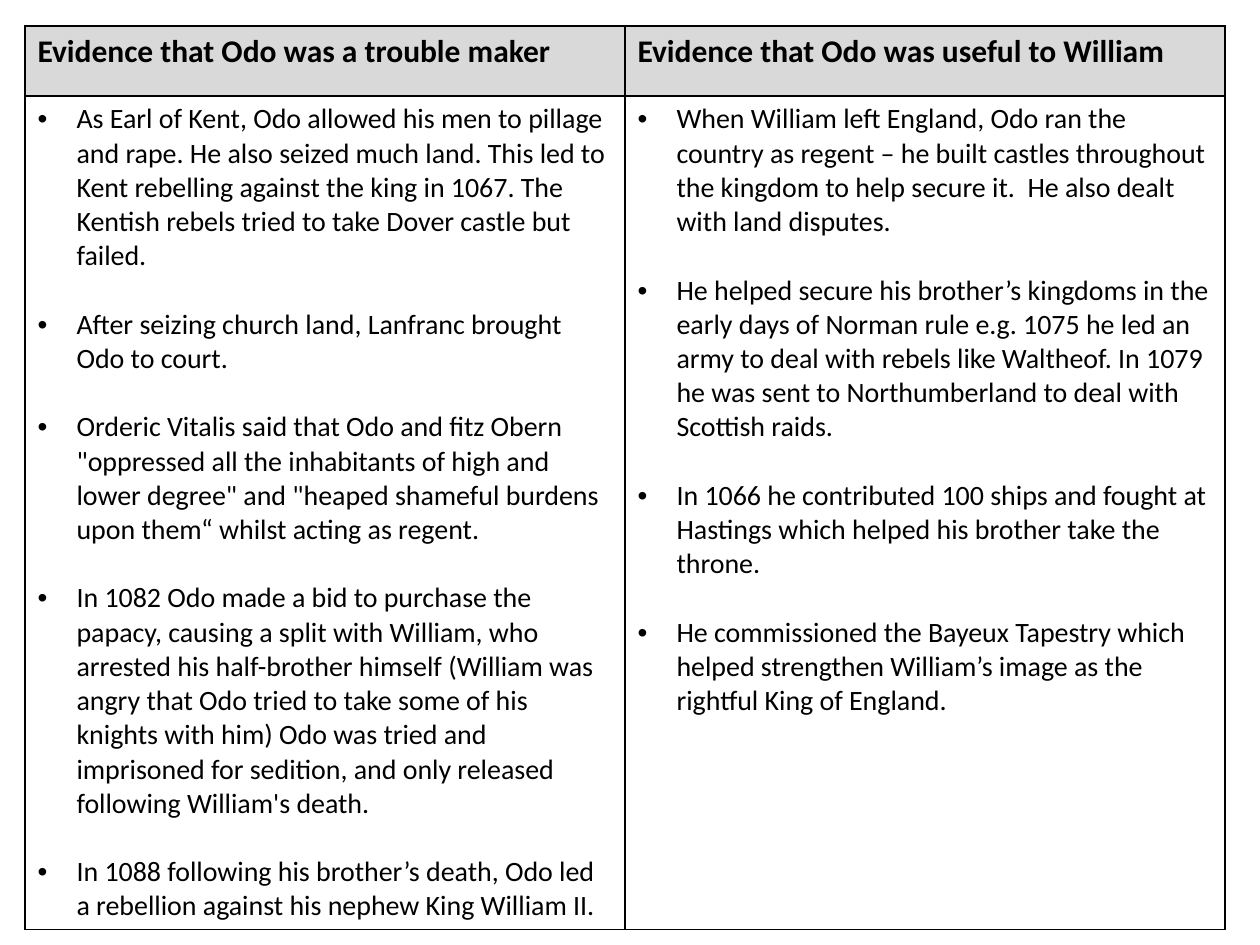
from dataclasses import dataclass

from lxml import etree
from pptx import Presentation
from pptx.dml.color import RGBColor
from pptx.oxml.ns import qn
from pptx.util import Emu, Pt

PX_PER_INCH = 126
FONT = "Calibri"
BLACK, GREY, WHITE = "000000", "D9D9D9", "FFFFFF"
LEFT, TOP, COL_WIDTH = 25, 26, 600
HEADER_HEIGHT, BODY_HEIGHT = 70, 833
INDENT = 39
BODY_GAP = 19.5  # points, one line of body text


@dataclass
class Column:
    heading: str
    points: list[str]


COLUMNS = [
    Column("Evidence that Odo was a trouble maker", [
        "As Earl of Kent, Odo allowed his men to pillage and rape. He also seized much land. "
        "This led to Kent rebelling against the king in 1067. The Kentish rebels tried to "
        "take Dover castle but failed.",
        "After seizing church land, Lanfranc brought Odo to court.",
        'Orderic Vitalis said that Odo and fitz Obern "oppressed all the inhabitants of high '
        'and lower degree" and "heaped shameful burdens upon them“ whilst acting as regent.',
        "In 1082 Odo made a bid to purchase the papacy, causing a split with William, who "
        "arrested his half-brother himself (William was angry that Odo tried to take some of "
        "his knights with him) Odo was tried and imprisoned for sedition, and only released "
        "following William's death.",
        "In 1088 following his brother’s death, Odo led a rebellion against his nephew "
        "King William II.",
    ]),
    Column("Evidence that Odo was useful to William", [
        "When William left England, Odo ran the country as regent – he built castles "
        "throughout the kingdom to help secure it.  He also dealt with land disputes.",
        "He helped secure his brother’s kingdoms in the early days of Norman rule e.g. 1075 "
        "he led an army to deal with rebels like Waltheof. In 1079 he was sent to "
        "Northumberland to deal with Scottish raids.",
        "In 1066 he contributed 100 ships and fought at Hastings which helped his brother "
        "take the throne.",
        "He commissioned the Bayeux Tapestry which helped strengthen William’s image as the "
        "rightful King of England.",
    ]),
]


def px(n: int) -> Emu:
    return Emu(round(n * 914400 / PX_PER_INCH))


def color(value: str) -> RGBColor:
    return RGBColor.from_string(value)


def add_borders(cell) -> None:
    # Border lines must come before the fill in the cell properties
    tc_pr = cell._tc.get_or_add_tcPr()
    for i, side in enumerate(("lnL", "lnR", "lnT", "lnB")):
        ln = etree.Element(qn(f"a:{side}"), w=str(Pt(1)))
        fill = etree.SubElement(ln, qn("a:solidFill"))
        etree.SubElement(fill, qn("a:srgbClr"), val=BLACK)
        tc_pr.insert(i, ln)


def add_bullet(p) -> None:
    p_pr = p._p.get_or_add_pPr()
    p_pr.set("marL", str(px(INDENT)))
    p_pr.set("indent", str(-px(INDENT)))
    etree.SubElement(p_pr, qn("a:buFont"), typeface="Arial")
    etree.SubElement(p_pr, qn("a:buChar"), char="•")


def fill_cell(cell, lines: list[str], size: int, fill: str, heading: bool) -> None:
    cell.fill.solid()
    cell.fill.fore_color.rgb = color(fill)
    add_borders(cell)
    tf = cell.text_frame
    for i, line in enumerate(lines):
        p = tf.add_paragraph() if i else tf.paragraphs[0]
        p.text = line
        if i:
            p.space_before = Pt(BODY_GAP)
        if not heading:
            add_bullet(p)
        font = p.runs[0].font
        font.name, font.size, font.bold = FONT, Pt(size), heading
        font.color.rgb = color(BLACK)


def main() -> None:
    prs = Presentation()
    prs.slide_width, prs.slide_height = px(1260), px(945)
    s = prs.slides.add_slide(prs.slide_layouts[6])

    # Table grid
    table = s.shapes.add_table(
        2, len(COLUMNS), px(LEFT), px(TOP),
        px(COL_WIDTH * len(COLUMNS)), px(HEADER_HEIGHT + BODY_HEIGHT)).table
    table.rows[0].height, table.rows[1].height = px(HEADER_HEIGHT), px(BODY_HEIGHT)

    # Heading and bullet points of each column
    for i, column in enumerate(COLUMNS):
        table.columns[i].width = px(COL_WIDTH)
        fill_cell(table.cell(0, i), [column.heading], 18, GREY, heading=True)
        fill_cell(table.cell(1, i), column.points, 16, WHITE, heading=False)

    prs.save("out.pptx")


if __name__ == "__main__":
    main()
